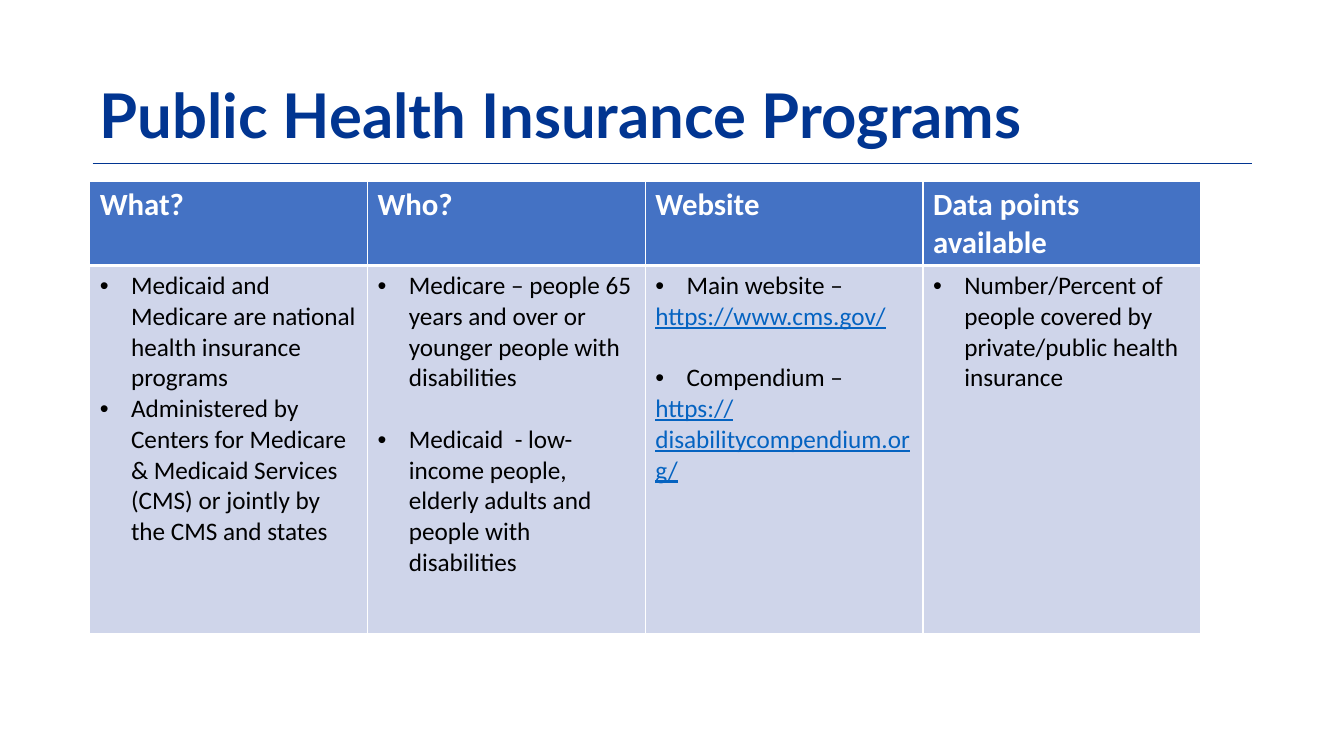
from lxml import etree
from pptx import Presentation
from pptx.dml.color import RGBColor
from pptx.enum.shapes import MSO_CONNECTOR
from pptx.enum.text import MSO_ANCHOR
from pptx.oxml.ns import qn
from pptx.util import Inches, Pt

COLORS = {
    "navy": "013591",
    "header": "4472C4",
    "body": "CFD5EA",
    "white": "FFFFFF",
    "black": "000000",
    "link": "0563C1",
}
HEADERS = ["What?", "Who?", "Website", "Data points available"]
# Each paragraph: kind, text, space before in points
BODY = [
    [("bullet", "Medicaid and Medicare are national health insurance programs", 0),
     ("bullet", "Administered by Centers for Medicare & Medicaid Services (CMS) "
                "or jointly by the CMS and states", 0)],
    [("bullet", "Medicare – people 65 years and over or younger people with disabilities", 0),
     ("bullet", "Medicaid  - low-income people, elderly adults and people with disabilities", 22)],
    [("bullet", "Main website –", 0),
     ("link", "https://www.cms.gov/", 0),
     ("bullet", "Compendium –", 22),
     ("link", "https://disabilitycompendium.org/", 0)],
    [("bullet", "Number/Percent of people covered by private/public health insurance", 0)],
]


def rgb(name):
    return RGBColor.from_string(COLORS[name])


def add_run(p, text, size, color, font="Calibri", bold=False, underline=False):
    r = p.add_run()
    r.text = text
    r.font.name = font
    r.font.size = Pt(size)
    r.font.bold = bold
    r.font.underline = underline
    r.font.color.rgb = rgb(color)


def add_title(s, text):
    tf = s.shapes.add_textbox(Inches(0.89), Inches(0.66), Inches(11.58), Inches(0.9)).text_frame
    tf.word_wrap = True
    tf.vertical_anchor = MSO_ANCHOR.BOTTOM
    p = tf.paragraphs[0]
    p.line_spacing = 0.9
    add_run(p, text, 44, "navy", font="Lato", bold=True)


def add_rule(s):
    y = Inches(1.62)
    rule = s.shapes.add_connector(MSO_CONNECTOR.STRAIGHT, Inches(0.92), y, Inches(12.42), y)
    rule.line.color.rgb = rgb("navy")
    rule.line.width = Pt(1)
    etree.SubElement(rule._element.spPr, qn("a:effectLst"))


def add_bullet(p):
    pPr = p._p.get_or_add_pPr()
    indent = Inches(0.31)
    pPr.set("marL", str(indent))
    pPr.set("indent", str(-indent))
    etree.SubElement(pPr, qn("a:buFont"), typeface="Arial")
    etree.SubElement(pPr, qn("a:buChar"), char="•")


def style_cell(cell, fill, top, bottom):
    """Give the cell a fill and white borders; top and bottom are widths in points."""
    tcPr = cell._tc.get_or_add_tcPr()
    for side, width in (("L", 1), ("R", 1), ("T", top), ("B", bottom)):
        ln = etree.SubElement(tcPr, qn(f"a:ln{side}"), w=str(Pt(width)))
        solid = etree.SubElement(ln, qn("a:solidFill"))
        etree.SubElement(solid, qn("a:srgbClr"), val=COLORS["white"])
    cell.fill.solid()
    cell.fill.fore_color.rgb = rgb(fill)


def fill_body_cell(cell, paragraphs):
    tf = cell.text_frame
    for i, (kind, text, before) in enumerate(paragraphs):
        p = tf.add_paragraph() if i else tf.paragraphs[0]
        if before:
            p.space_before = Pt(before)
        if kind == "bullet":
            add_bullet(p)
            add_run(p, text, 18, "black")
        else:
            add_run(p, text, 18, "link", underline=True)


def add_programs_table(s):
    table = s.shapes.add_table(2, len(HEADERS), Inches(0.89), Inches(1.8),
                               Inches(11.02), Inches(4.48)).table
    table.rows[0].height = Inches(0.83)
    table.rows[1].height = Inches(3.65)
    for col, (header, paragraphs) in enumerate(zip(HEADERS, BODY)):
        head, body = table.cell(0, col), table.cell(1, col)
        style_cell(head, "header", top=1, bottom=3)
        add_run(head.text_frame.paragraphs[0], header, 22, "white", bold=True)
        style_cell(body, "body", top=3, bottom=1)
        fill_body_cell(body, paragraphs)


def main():
    prs = Presentation()
    prs.slide_width, prs.slide_height = Inches(13.33), Inches(7.5)
    s = prs.slides.add_slide(prs.slide_layouts[6])
    add_rule(s)
    add_title(s, "Public Health Insurance Programs")
    add_programs_table(s)
    prs.save("out.pptx")


if __name__ == "__main__":
    main()
